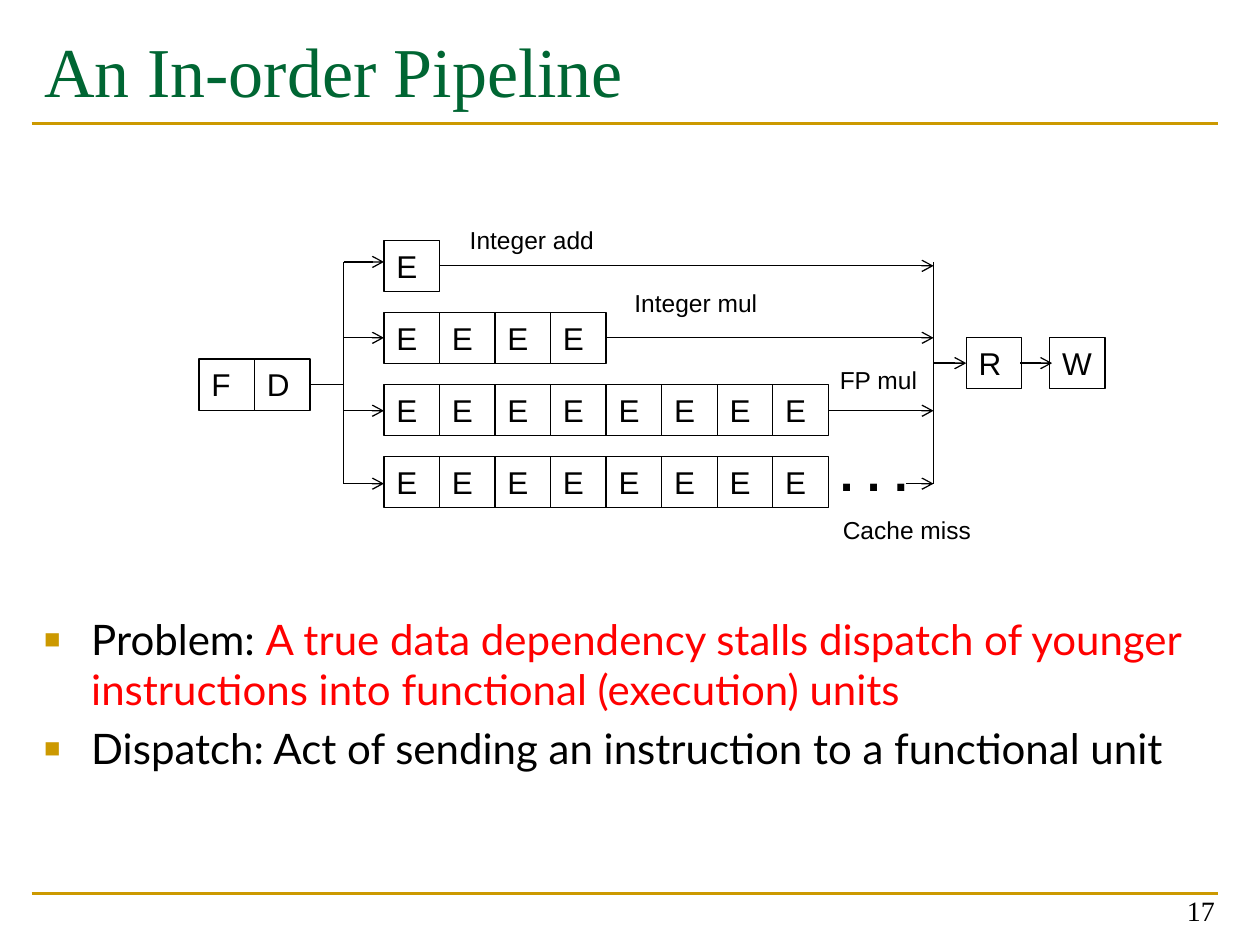
from lxml.etree import SubElement
from pptx import Presentation
from pptx.dml.color import RGBColor
from pptx.enum.shapes import MSO_CONNECTOR as Connector, MSO_SHAPE as Shape
from pptx.enum.text import MSO_ANCHOR as Anchor, PP_ALIGN as Align
from pptx.oxml.ns import qn
from pptx.util import Cm, Pt

BLACK, WHITE, GOLD, GREEN, RED = "000000", "FFFFFF", "CC9900", "006633", "FF0000"
CELL_W, CELL_H = 1.12, 1.03
TITLE = dict(name="Times New Roman", size=Pt(40), bold=False)
BODY = dict(name="Lato", size=Pt(24))
NUMBER = dict(name="Times New Roman", size=Pt(16))
STAGE = dict(name="Arial", size=Pt(18))
LABEL = dict(name="Arial", size=Pt(14))
DOTS = dict(name="Arial", size=Pt(28), bold=True)


def color(hex_string):
    return RGBColor.from_string(hex_string)


def set_values(target, values):
    for name, value in values.items():
        setattr(target, name, value)


def add_span(para, text, font, ink=BLACK):
    span = para.add_run()
    span.text = text
    set_values(span.font, font)
    span.font.color.rgb = color(ink)


def add_text(page, box, text, font, align=Align.LEFT, anchor=Anchor.TOP):
    frame = page.shapes.add_textbox(*map(Cm, box)).text_frame
    set_values(frame, dict(word_wrap=True, vertical_anchor=anchor))
    para = frame.paragraphs[0]
    para.alignment = align
    add_span(para, text, font)


def add_line(page, start, end, ink=BLACK, width=0.75, arrow=False):
    line = page.shapes.add_connector(Connector.STRAIGHT, *map(Cm, (*start, *end)))
    line.line.color.rgb = color(ink)
    line.line.width = Pt(width)
    properties = line._element.spPr
    if arrow:
        SubElement(properties.find(qn("a:ln")), qn("a:tailEnd"), type="arrow")
    SubElement(properties, qn("a:effectLst"))


def add_stages(page, left, top, letters):
    """A row of touching cells, one letter in each."""
    for index, letter in enumerate(letters):
        box = (left + index * CELL_W, top, CELL_W, CELL_H)
        cell = page.shapes.add_shape(Shape.RECTANGLE, *map(Cm, box))
        cell.shadow.inherit = False
        cell.fill.solid()
        cell.fill.fore_color.rgb = color(WHITE)
        cell.line.color.rgb = color(BLACK)
        cell.line.width = Pt(0.75)
        cell.text_frame.vertical_anchor = Anchor.TOP
        para = cell.text_frame.paragraphs[0]
        para.alignment = Align.LEFT
        add_span(para, letter, STAGE)


def add_frame(page, left, right, number):
    """Gold rules above and below the content, and the page number."""
    for y in (2.49, 18.01):
        add_line(page, (left, y), (right, y), GOLD, 1.5)
    add_text(page, (right - 5.74, 17.55, 5.92, 1.27), number, NUMBER,
             Align.RIGHT, Anchor.BOTTOM)


def add_title(page, box, text):
    title = page.shapes.title
    set_values(title, dict(zip(("left", "top", "width", "height"), map(Cm, box))))
    set_values(title.text_frame, dict(word_wrap=True, vertical_anchor=Anchor.TOP))
    para = title.text_frame.paragraphs[0]
    para.alignment = Align.LEFT
    add_span(para, text, TITLE, GREEN)


def add_pipeline(page, left, top):
    def at(x, y):
        return left + x, top + y

    fork, execute, join = 2.92, 3.73, 14.81
    first_y, last_y = 0.86, 5.33

    # Fetch and decode, then the split into lanes
    add_stages(page, *at(0, 2.82), "FD")
    add_line(page, at(2 * CELL_W, 3.33), at(fork, 3.33))
    for x in (fork, join):
        add_line(page, at(x, first_y), at(x, last_y))

    # Execution lanes: cell count, arrow height, label and its place
    lanes = [
        (1, first_y, "Integer add", (5.21, 0)),
        (4, 2.39, "Integer mul", (8.53, 1.27)),
        (8, 3.86, "FP mul", (12.67, 2.82)),
        (8, last_y, "Cache miss", (12.73, 5.84)),
    ]
    for index, (count, y, label, place) in enumerate(lanes):
        add_stages(page, *at(execute, 0.43 + index * 1.45), "E" * count)
        add_line(page, at(fork, y), at(execute, y), arrow=True)
        add_text(page, (*at(*place), 3.4, 0.86), label, LABEL)
        exit_x = 14.25 if y == last_y else execute + count * CELL_W
        exit_y = 0.94 if y == first_y else y
        add_line(page, at(exit_x, exit_y), at(join, exit_y), arrow=True)
    add_text(page, (*at(12.67, 4.37), 2.2, 1.45), ". . .", DOTS)

    # Reorder and write-back
    for letter, x in (("R", 15.47), ("W", 17.15)):
        add_stages(page, *at(x, 2.39), letter)
    for start, end in ((join, 15.47), (16.56, 17.2)):
        add_line(page, at(start, 2.9), at(end, 2.9), arrow=True)


def add_bullets(page, box, items):
    frame = page.shapes.add_textbox(*map(Cm, box)).text_frame
    frame.word_wrap = True
    for index, spans in enumerate(items):
        para = frame.add_paragraph() if index else frame.paragraphs[0]
        para.space_before = Pt(4.8)
        properties = para._p.get_or_add_pPr()
        indent = Cm(0.95)
        properties.set("marL", str(indent))
        properties.set("indent", str(-indent))
        SubElement(SubElement(properties, qn("a:buClr")), qn("a:srgbClr"), val=GOLD)
        SubElement(properties, qn("a:buSzPct"), val="65000")
        SubElement(properties, qn("a:buFont"), typeface="Arial")
        SubElement(properties, qn("a:buChar"), char="■")
        for text, ink in spans:
            add_span(para, text, BODY, ink)


def main():
    deck = Presentation()
    set_values(deck, dict(slide_width=Cm(25.4), slide_height=Cm(19.05)))
    page = deck.slides.add_slide(deck.slide_layouts[5])
    add_frame(page, 0.64, 24.56, "17")
    add_title(page, (0.64, 0.43, 23.93, 2.97), "An In-order Pipeline")
    add_pipeline(page, 4.01, 4.42)
    add_bullets(page, (0.64, 12.24, 23.93, 4.95), [
        [("Problem: ", BLACK),
         ("A true data dependency stalls dispatch of younger instructions "
          "into functional (execution) units", RED)],
        [("Dispatch: Act of sending an instruction to a functional unit", BLACK)],
    ])
    deck.save("out.pptx")


if __name__ == "__main__":
    main()
